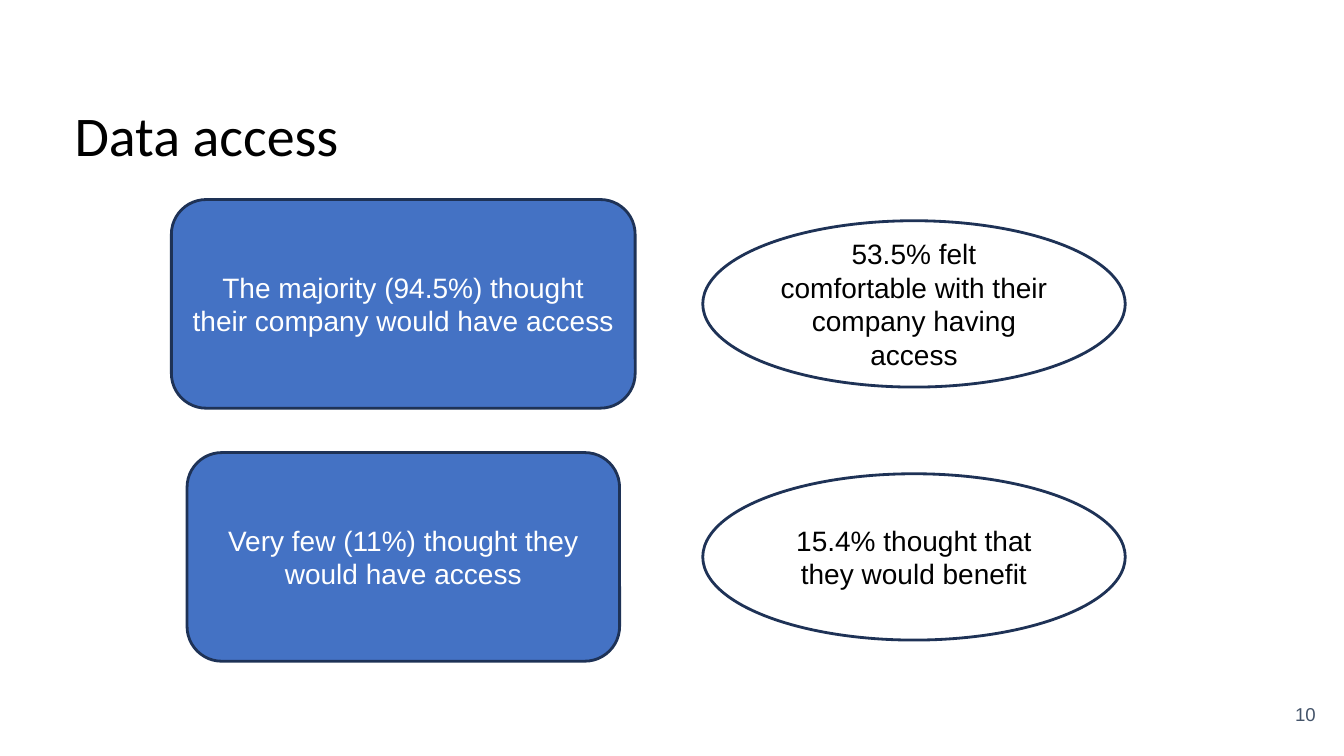
from pptx import Presentation
from pptx.dml.color import RGBColor
from pptx.enum import shapes, text
from pptx.util import Inches, Pt

BLACK = RGBColor(0x00, 0x00, 0x00)
WHITE = RGBColor(0xFF, 0xFF, 0xFF)
BLUE = RGBColor(0x44, 0x72, 0xC4)
NAVY = RGBColor(0x1E, 0x32, 0x56)
SLATE = RGBColor(0x44, 0x54, 0x6A)

ROW_HEIGHT, ROW_PITCH = 2.07, 2.51
BELIEF_CENTER = 4.0
OPINION_LEFT, OPINION_WIDTH, OPINION_HEIGHT = 6.97, 4.19, 1.65

# Belief, width of its box, opinion beside it
FINDINGS = [
    ("The majority (94.5%) thought their company would have access", 4.6,
     "53.5% felt comfortable with their company having access"),
    ("Very few (11%) thought they would have access", 4.29,
     "15.4% thought that they would benefit"),
]


def write(shape, words, size, color, align, anchor, inset, font="Arial"):
    frame = shape.text_frame
    frame.text = words
    frame.word_wrap = True
    frame.auto_size = text.MSO_AUTO_SIZE.NONE
    frame.vertical_anchor = anchor
    frame.margin_left = frame.margin_right = Inches(inset[0])
    frame.margin_top = frame.margin_bottom = Inches(inset[1])
    para = frame.paragraphs[0]
    para.alignment = align
    span = para.runs[0]
    span.font.name = font
    span.font.size = Pt(size)
    span.font.color.rgb = color


def add_title(page, left, top, width, height):
    title = page.shapes.title
    title.left, title.top = Inches(left), Inches(top)
    title.width, title.height = Inches(width), Inches(height)
    write(title, "Data access", 40, BLACK, text.PP_ALIGN.LEFT,
          text.MSO_ANCHOR.TOP, (0.13, 0.13), "Calibri")


def add_bubble(page, kind, words, left, top, width, height, fill, color):
    bubble = page.shapes.add_shape(kind, Inches(left), Inches(top),
                                   Inches(width), Inches(height))
    bubble.shadow.inherit = False
    if fill is None:
        bubble.fill.background()
    else:
        bubble.fill.solid()
        bubble.fill.fore_color.rgb = fill
    bubble.line.color.rgb = NAVY
    bubble.line.width = Pt(2)
    write(bubble, words, 20, color, text.PP_ALIGN.CENTER,
          text.MSO_ANCHOR.MIDDLE, (0.1, 0.05))


def add_finding(page, top, belief, belief_width, opinion):
    """One row: a blue box and, centred beside it, an outlined ellipse."""
    add_bubble(page, shapes.MSO_SHAPE.ROUNDED_RECTANGLE, belief,
               BELIEF_CENTER - belief_width / 2, top,
               belief_width, ROW_HEIGHT, BLUE, WHITE)
    add_bubble(page, shapes.MSO_SHAPE.OVAL, opinion,
               OPINION_LEFT, top + (ROW_HEIGHT - OPINION_HEIGHT) / 2,
               OPINION_WIDTH, OPINION_HEIGHT, None, BLACK)


def add_page_number(page, left, top, width, height):
    box = page.shapes.add_textbox(Inches(left), Inches(top),
                                  Inches(width), Inches(height))
    write(box, "10", 13.3, SLATE, text.PP_ALIGN.RIGHT,
          text.MSO_ANCHOR.MIDDLE, (0.1, 0.1))


def main():
    deck = Presentation()
    deck.slide_width, deck.slide_height = Inches(13.33), Inches(7.5)
    page = deck.slides.add_slide(deck.slide_layouts[5])
    add_title(page, 0.61, 0.87, 16.57, 1.11)
    for row, finding in enumerate(FINDINGS):
        add_finding(page, 1.98 + row * ROW_PITCH, *finding)
    add_page_number(page, 12.35, 6.8, 0.8, 0.57)
    deck.save("out.pptx")


if __name__ == "__main__":
    main()
